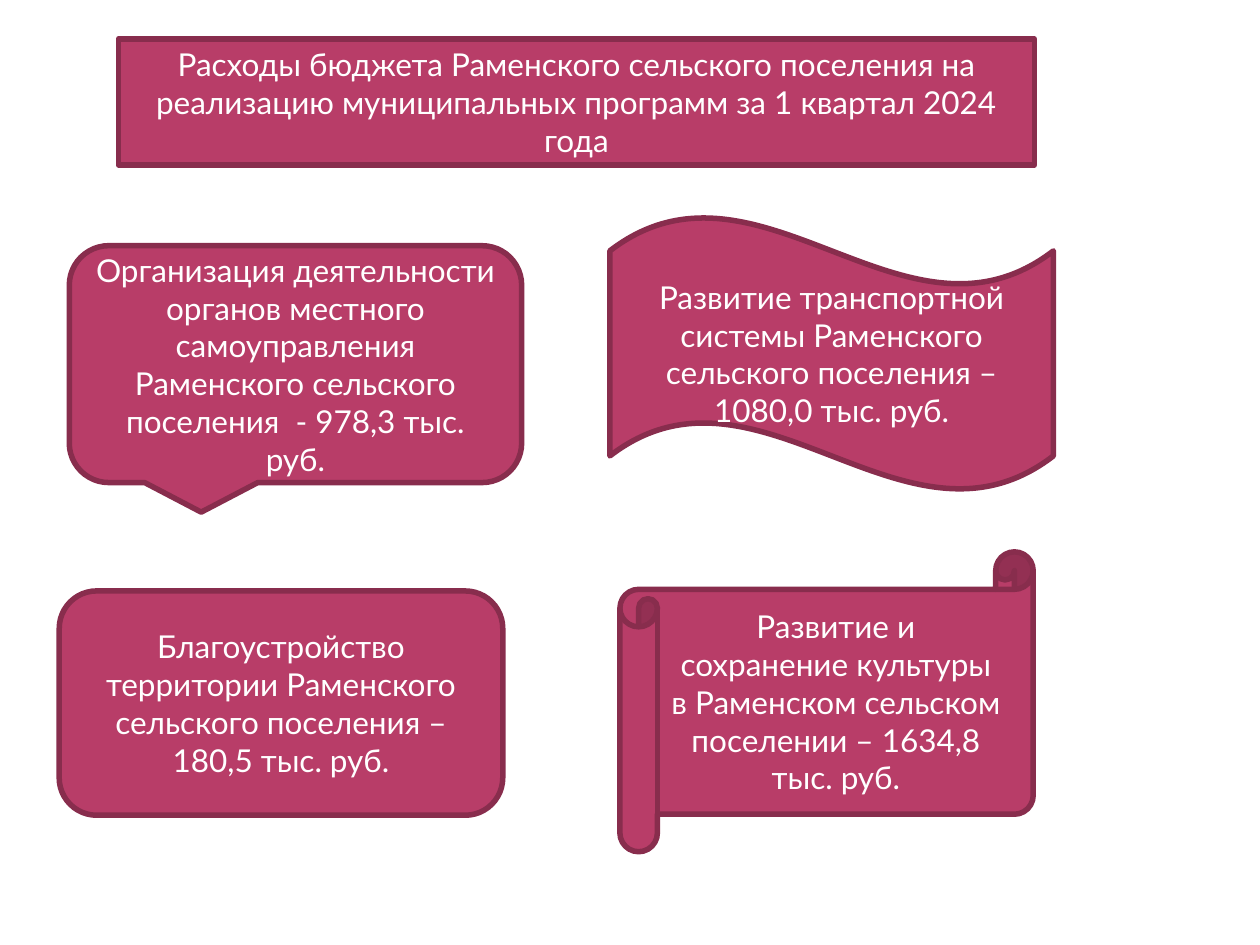
import pptx
import pptx.dml.color
import pptx.enum.shapes
import pptx.enum.text
import pptx.util

SHAPE = pptx.enum.shapes.MSO_SHAPE

# The grid has 100 columns and 75 rows of a tenth of an inch
COLUMNS, ROWS = 100, 75


def color(value):
    return pptx.dml.color.RGBColor.from_string(value)


def write(frame, text, size, font, ink, align):
    para = frame.paragraphs[0]
    para.alignment = align
    span = para.add_run()
    span.text = text
    span.font.size = pptx.util.Pt(size)
    span.font.name = font
    span.font.color.rgb = color(ink)


class BudgetSlide:
    fill, border, ink = "B83D68", "882D4D", "FFFFFF"
    border_width = 3.15
    font, text_size = "Lato", 18

    def __init__(self, deck):
        self.page = deck.slides.add_slide(deck.slide_layouts[6])
        self.column = deck.slide_width / COLUMNS
        self.row = deck.slide_height / ROWS

    def panel(self, kind, left, top, width, height, text):
        box = self.page.shapes.add_shape(
            kind,
            round(left * self.column), round(top * self.row),
            round(width * self.column), round(height * self.row))
        box.shadow.inherit = False
        box.fill.solid()
        box.fill.fore_color.rgb = color(self.fill)
        box.line.color.rgb = color(self.border)
        box.line.width = pptx.util.Pt(self.border_width)
        frame = box.text_frame
        frame.word_wrap = True
        frame.vertical_anchor = pptx.enum.text.MSO_ANCHOR.MIDDLE
        write(frame, text, size=self.text_size, font=self.font, ink=self.ink,
              align=pptx.enum.text.PP_ALIGN.CENTER)


def main():
    deck = pptx.Presentation()
    deck.slide_width = pptx.util.Inches(10)
    deck.slide_height = pptx.util.Inches(7.5)
    slide = BudgetSlide(deck)

    # Spending programmes
    slide.panel(SHAPE.ROUNDED_RECTANGULAR_CALLOUT, 5.5, 19.5, 35.9, 18.8,
                "Организация деятельности органов местного самоуправления "
                "Раменского сельского поселения  - 978,3 тыс. руб.")
    slide.panel(SHAPE.WAVE, 48.4, 17.2, 35.2, 21.7,
                "Развитие транспортной системы Раменского сельского "
                "поселения – 1080,0 тыс. руб.")
    slide.panel(SHAPE.HORIZONTAL_SCROLL, 49.2, 43.8, 32.8, 23.8,
                "Развитие и сохранение культуры в Раменском сельском "
                "поселении – 1634,8 тыс. руб.")
    slide.panel(SHAPE.ROUNDED_RECTANGLE, 4.7, 46.9, 35.2, 17.8,
                "Благоустройство территории Раменского сельского "
                "поселения – 180,5 тыс. руб.")

    # Title
    slide.panel(SHAPE.RECTANGLE, 9.4, 3.1, 72.7, 10,
                "Расходы бюджета Раменского сельского поселения на реализацию "
                "муниципальных программ за 1 квартал 2024 года")

    deck.save("out.pptx")


if __name__ == "__main__":
    main()
